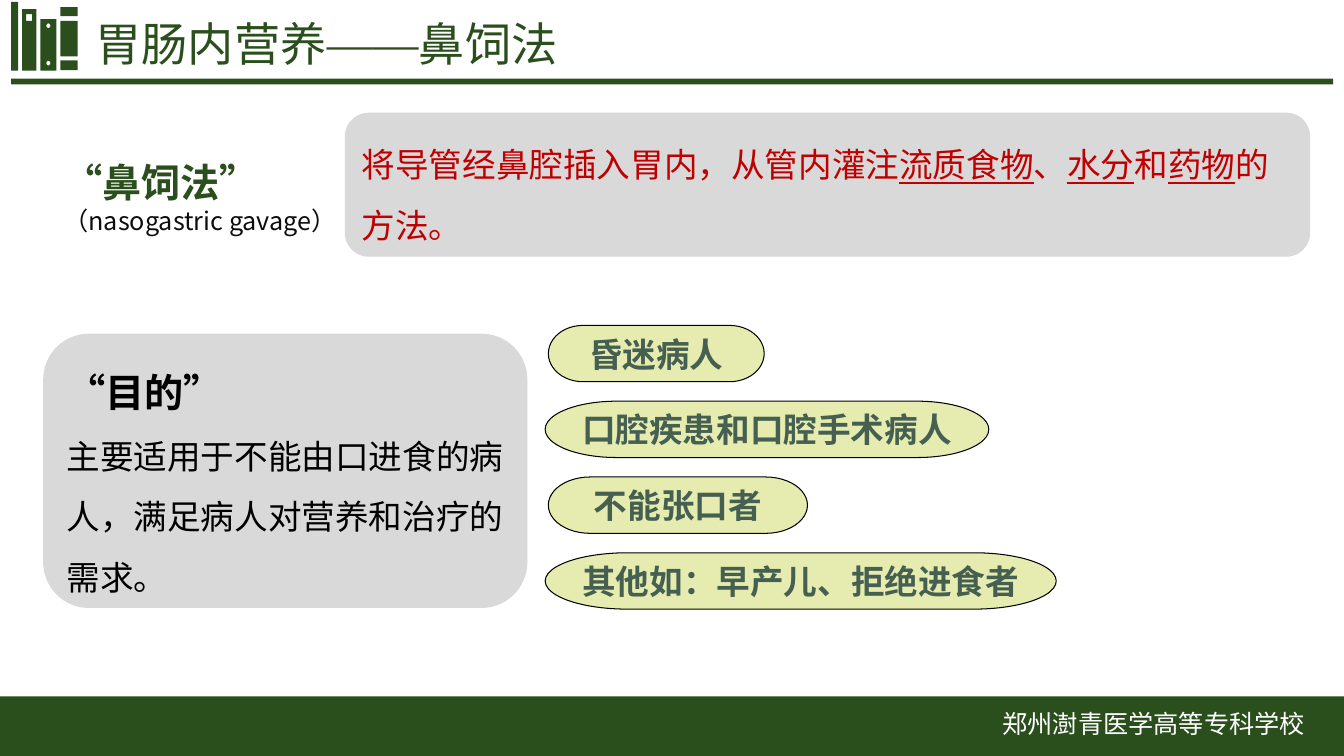
"""Build the slide on nasogastric feeding: definition, purpose and patients."""
from math import cos, pi, sin

from lxml.etree import SubElement
from pptx import Presentation
from pptx.dml.color import RGBColor as RGB
from pptx.enum.shapes import MSO_SHAPE as Kind
from pptx.enum.text import MSO_ANCHOR as Anchor, PP_ALIGN as Align
from pptx.oxml.ns import qn
from pptx.util import Cm, Pt

INK = {"green": "2A4F1C", "grey": "D9D9D9", "lime": "E6ECB0", "slate": "455F51",
       "red": "C00000", "black": "000000", "dark": "0D0D0D", "white": "FFFFFF"}
SANS = "Noto Sans CJK SC"

deck = Presentation()
deck.slide_width, deck.slide_height = Cm(33.87), Cm(19.05)
shapes = deck.slides.add_slide(deck.slide_layouts[6]).shapes


def paint(shape, fill, edge=None):
    shape.shadow.inherit = False
    shape.fill.solid()
    shape.fill.fore_color.rgb = RGB.from_string(INK[fill])
    if edge:
        shape.line.color.rgb = RGB.from_string(INK[edge])
        shape.line.width = Pt(0.75)
    else:
        shape.line.fill.background()
    return shape


def write(shape, rows, wrap=True, anchor=Anchor.MIDDLE, align=Align.LEFT, space=None, face=SANS):
    frame = shape.text_frame
    frame.word_wrap, frame.vertical_anchor = wrap, anchor
    for i, (parts, size, ink, bold) in enumerate(rows):
        para = frame.add_paragraph() if i else frame.paragraphs[0]
        para.alignment, para.line_spacing = align, space
        font = para.font
        font.name, font.size, font.bold = face, Pt(size), bold
        font.color.rgb = RGB.from_string(INK[ink])
        SubElement(para._p.pPr.find(qn("a:defRPr")), qn("a:ea"), typeface=face)
        for j, part in enumerate(parts):
            run = para.add_run()
            run.text = part
            if j % 2:
                run.font.underline = True


bars = [(0.28, 1.98, 33.32, 0.15), (0.28, 0.05, 0.18, 1.73), (1.52, 1.52, 0.44, 0.25),
        (1.52, 0.53, 0.44, 0.89), (1.52, 0.18, 0.44, 0.23), (0, 17.55, 33.87, 1.5)]
for box in bars:
    paint(shapes.add_shape(Kind.RECTANGLE, *map(Cm, box)), "green")

dots = [[(1.22 + 0.05 * cos(k * pi / 8), y + 0.06 * sin(k * pi / 8)) for k in range(16)]
        for y in (0.65, 1.59)]
books = [
    [[(1.02, 0.48), (1.42, 0.48), (1.42, 1.78), (1.02, 1.78)], *dots],
    [[(0.56, 0.23), (0.92, 0.23), (0.92, 1.78), (0.56, 1.78)],
     [(0.66, 0.36), (0.66, 0.53), (0.81, 0.53), (0.81, 0.36)]],
]
for rings in books:
    rings = [[(Cm(x), Cm(y)) for x, y in ring] for ring in rings]
    pen = shapes.build_freeform(*rings[0][0])
    for i, ring in enumerate(rings):
        if i:
            pen.move_to(*ring[0])
        pen.add_line_segments(ring[1:], close=True)
    paint(pen.convert_to_shape(), "green")

title = shapes.add_textbox(Cm(2.16), Cm(0.43), Cm(29.2), Cm(1.7))
write(title, [(["胃肠内营养——鼻饲法"], 33, "green", False)],
      anchor=Anchor.TOP, space=0.9, face="Montserrat")

term = shapes.add_textbox(Cm(1.35), Cm(3.86), Cm(7.72), Cm(2.24))
write(term, [(["“鼻饲法”"], 28, "green", True),
             (["（nasogastric gavage）"], 18, "dark", False)], wrap=False, anchor=Anchor.TOP)

means = paint(shapes.add_shape(Kind.ROUNDED_RECTANGLE, Cm(8.69), Cm(2.84), Cm(24.33), Cm(3.63)), "grey")
parts = ["将导管经鼻腔插入胃内，从管内灌注", "流质食物", "、", "水分", "和", "药物", "的方法。"]
write(means, [(parts, 24, "red", False)], space=1.5)

aim = paint(shapes.add_shape(Kind.ROUNDED_RECTANGLE, Cm(1.09), Cm(8.41), Cm(12.2), Cm(6.91)), "grey")
write(aim, [(["“目的”"], 28, "black", True),
            (["主要适用于不能由口进食的病人，满足病人对营养和治疗的需求。"], 24, "black", False)],
      space=1.5)

cases = [("昏迷病人", 13.82, 5.44), ("口腔疾患和口腔手术病人", 13.74, 11.18),
         ("不能张口者", 13.82, 6.53), ("其他如：早产儿、拒绝进食者", 13.74, 12.88)]
for i, (text, left, width) in enumerate(cases):
    pill = shapes.add_shape(Kind.FLOWCHART_TERMINATOR, Cm(left), Cm(8.2 + 1.91 * i), Cm(width), Cm(1.42))
    write(paint(pill, "lime", "black"), [([text], 24, "slate", True)], wrap=False, align=Align.CENTER)

school = shapes.add_textbox(Cm(24.26), Cm(17.73), Cm(9.63), Cm(1.17))
write(school, [(["郑州澍青医学高等专科学校"], 18, "white", False)],
      anchor=Anchor.TOP, align=Align.CENTER)

deck.save("out.pptx")
